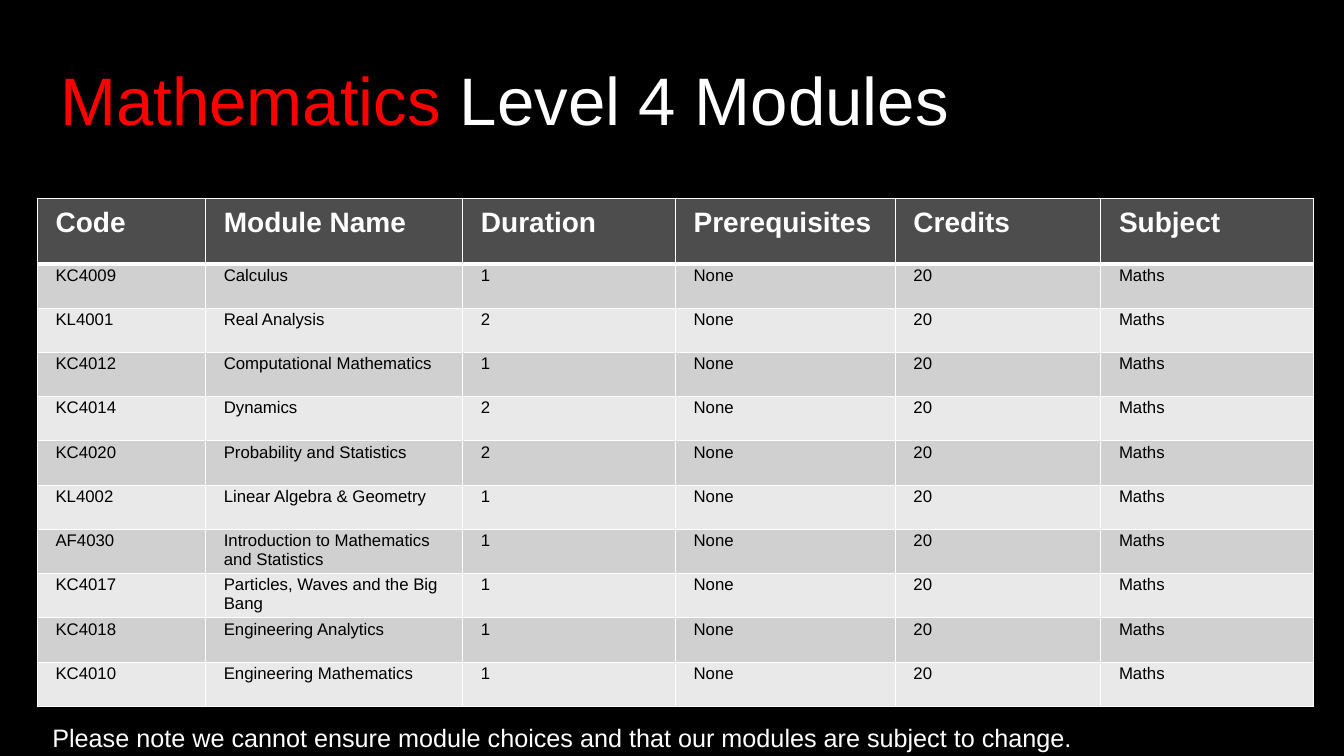
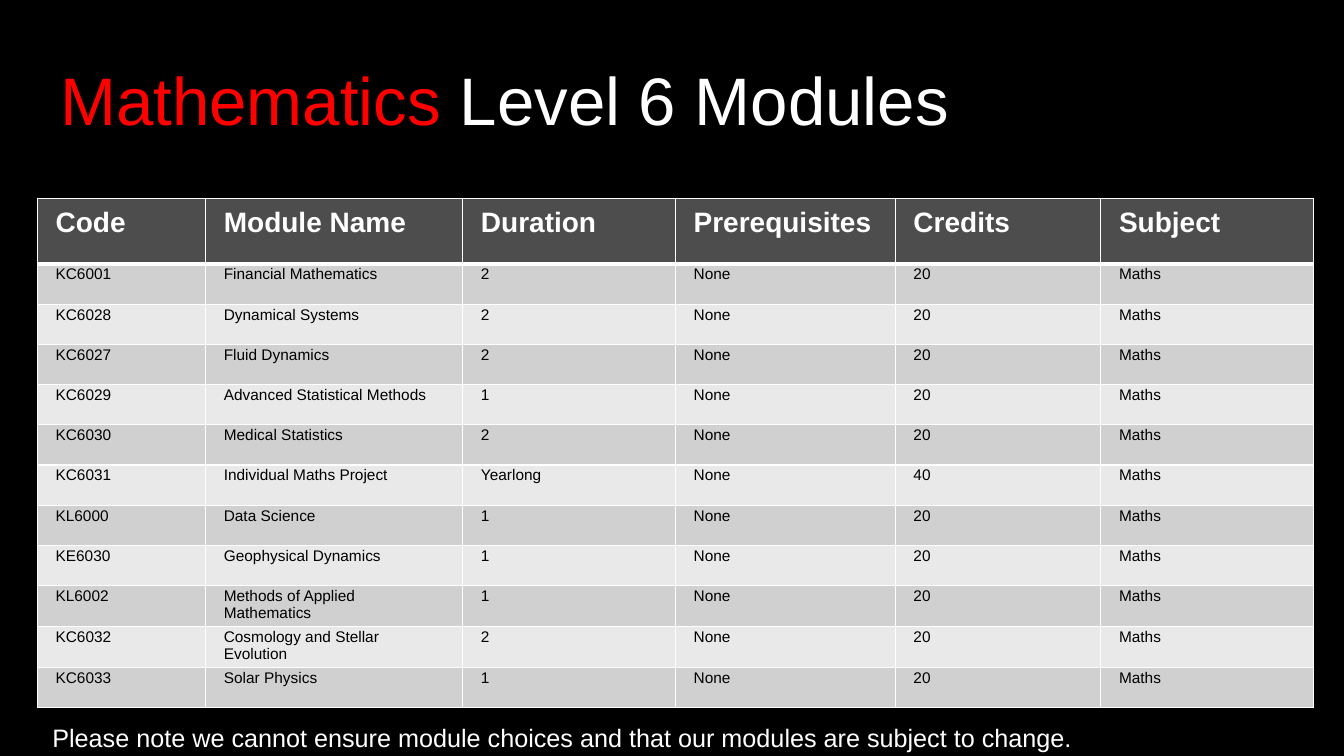
from dataclasses import astuple, dataclass
from typing import Any

from pptx import Presentation, oxml, slide as sl, table as tb, util as u
from pptx.dml import color as dml
from pptx.enum import text as tx
from pptx.oxml import ns


@dataclass(frozen=True)
class Theme:
    back: str = "000000"
    accent: str = "FF0000"
    light: str = "FFFFFF"
    ink: str = "000000"
    head: str = "4D4D4D"
    bands: tuple[str, str] = ("D0D0D0", "E9E9E9")
    face: str = "Arial"
    title: int = 48
    label: int = 20
    note: int = 18
    thin: int = 1
    thick: int = 3


@dataclass(frozen=True)
class Module:
    code: str
    name: str
    term: str
    needs: str = "None"
    credits: str = "20"
    field: str = "Maths"


@dataclass(frozen=True)
class Level:
    title: str
    size: int
    rows: tuple[Module, ...]


@dataclass(frozen=True)
class Box:
    left: float
    top: float
    width: float
    height: float

    def place(self) -> list[u.Length]:
        return [u.Cm(side) for side in astuple(self)]


@dataclass(frozen=True)
class Look:
    """Format of one table row."""
    fill: str
    ink: str
    size: int
    bold: bool
    pad: float
    edges: dict[str, int]


THEME = Theme()
WIDTH, HEIGHT = 33.87, 19.05
TITLE = Box(1.27, 1.02, 25.78, 3.18)
GRID = Box(0.94, 5, 32.16, 12.8)
NOTE = Box(1.07, 18.08, 31.06, 1.02)
COLS = (4.24, 6.48, 5.36, 5.54, 5.18, 5.36)
HEAD_HIGH = 1.65
SIDE_PAD = 0.46
HEADS = Module("Code", "Module Name", "Duration", "Prerequisites", "Credits", "Subject")
SUBJECT = "Mathematics"
REMARK = "Please note we cannot ensure module choices and that our modules are subject to change."

LEVELS = (
    Level("Level 4 Modules", 12, (
        Module("KC4009", "Calculus", "1"),
        Module("KL4001", "Real Analysis", "2"),
        Module("KC4012", "Computational Mathematics", "1"),
        Module("KC4014", "Dynamics", "2"),
        Module("KC4020", "Probability and Statistics", "2"),
        Module("KL4002", "Linear Algebra & Geometry", "1"),
        Module("AF4030", "Introduction to Mathematics and Statistics", "1"),
        Module("KC4017", "Particles, Waves and the Big Bang", "1"),
        Module("KC4018", "Engineering Analytics", "1"),
        Module("KC4010", "Engineering Mathematics", "1"),
    )),
    Level("Level 6 Modules", 11, (
        Module("KC6001", "Financial Mathematics", "2"),
        Module("KC6028", "Dynamical Systems", "2"),
        Module("KC6027", "Fluid Dynamics", "2"),
        Module("KC6029", "Advanced Statistical Methods", "1"),
        Module("KC6030", "Medical Statistics", "2"),
        Module("KC6031", "Individual Maths Project", "Yearlong", credits="40"),
        Module("KL6000", "Data Science", "1"),
        Module("KE6030", "Geophysical Dynamics", "1"),
        Module("KL6002", "Methods of Applied Mathematics", "1"),
        Module("KC6032", "Cosmology and Stellar Evolution", "2"),
        Module("KC6033", "Solar Physics", "1"),
    )),
)


def apply(item: Any, values: dict[str, Any]) -> None:
    for key, value in values.items():
        setattr(item, key, value)


def write(para: Any, words: str, size: int, ink: str, bold: bool = False) -> None:
    run = para.add_run()
    run.text = words
    apply(run.font, {"name": THEME.face, "size": u.Pt(size), "bold": bold})
    run.font.color.rgb = dml.RGBColor.from_string(ink)


def add_text(slide: sl.Slide, box: Box, parts: list[tuple[str, str]], size: int,
             frame: dict[str, Any], para: dict[str, Any]) -> None:
    """Add a one-paragraph text box; parts pair words with a colour."""
    body = slide.shapes.add_textbox(*box.place()).text_frame
    apply(body, {"word_wrap": True, **frame})
    line = body.paragraphs[0]
    apply(line, para)
    for words, ink in parts:
        write(line, words, size, ink)


def add_edge(cell: Any, side: str, width: int) -> None:
    props = cell._tc.get_or_add_tcPr()
    props.append(oxml.parse_xml(
        f'<a:ln{side} {ns.nsdecls("a")} w="{u.Pt(width)}"><a:solidFill>'
        f'<a:srgbClr val="{THEME.light}"/></a:solidFill></a:ln{side}>'))


def fill_row(grid: tb.Table, row: int, item: Module, look: Look) -> None:
    for col, words in enumerate(astuple(item)):
        cell = grid.cell(row, col)
        apply(cell, {
            "margin_left": u.Cm(SIDE_PAD), "margin_right": u.Cm(SIDE_PAD),
            "margin_top": u.Cm(look.pad), "margin_bottom": u.Cm(look.pad),
        })
        for side, width in look.edges.items():
            add_edge(cell, side, width)
        cell.fill.solid()
        cell.fill.fore_color.rgb = dml.RGBColor.from_string(look.fill)
        write(cell.text_frame.paragraphs[0], words, look.size, look.ink, look.bold)


def add_grid(slide: sl.Slide, level: Level) -> None:
    count = len(level.rows)
    grid = slide.shapes.add_table(count + 1, len(COLS), *GRID.place()).table
    grid.horz_banding = False
    for col, width in zip(grid.columns, COLS):
        col.width = u.Cm(width)
    for row in grid.rows:
        row.height = u.Cm((GRID.height - HEAD_HIGH) / count)
    grid.rows[0].height = u.Cm(HEAD_HIGH)

    thin = THEME.thin
    fill_row(grid, 0, HEADS, Look(
        THEME.head, THEME.light, THEME.label, True, 0.23,
        {"L": thin, "R": thin, "T": thin, "B": THEME.thick}))
    looks = [Look(band, THEME.ink, level.size, False, 0.05,
                  {"L": thin, "R": thin, "B": thin}) for band in THEME.bands]
    for index, item in enumerate(level.rows):
        fill_row(grid, index + 1, item, looks[index % len(looks)])


def add_level(deck: Any, level: Level) -> None:
    slide = deck.slides.add_slide(deck.slide_layouts[6])
    add_grid(slide, level)
    add_text(slide, TITLE, [(SUBJECT, THEME.accent), (f" {level.title}", THEME.light)],
             THEME.title, {"vertical_anchor": tx.MSO_ANCHOR.MIDDLE}, {"line_spacing": 0.9})
    add_text(slide, NOTE, [(REMARK, THEME.light)], THEME.note,
             {"auto_size": tx.MSO_AUTO_SIZE.SHAPE_TO_FIT_TEXT}, {})


def main() -> None:
    deck = Presentation()
    apply(deck, {"slide_width": u.Cm(WIDTH), "slide_height": u.Cm(HEIGHT)})
    back = deck.slide_master.background.fill
    back.solid()
    back.fore_color.rgb = dml.RGBColor.from_string(THEME.back)
    for level in LEVELS:
        add_level(deck, level)
    deck.save("out.pptx")


if __name__ == "__main__":
    main()
